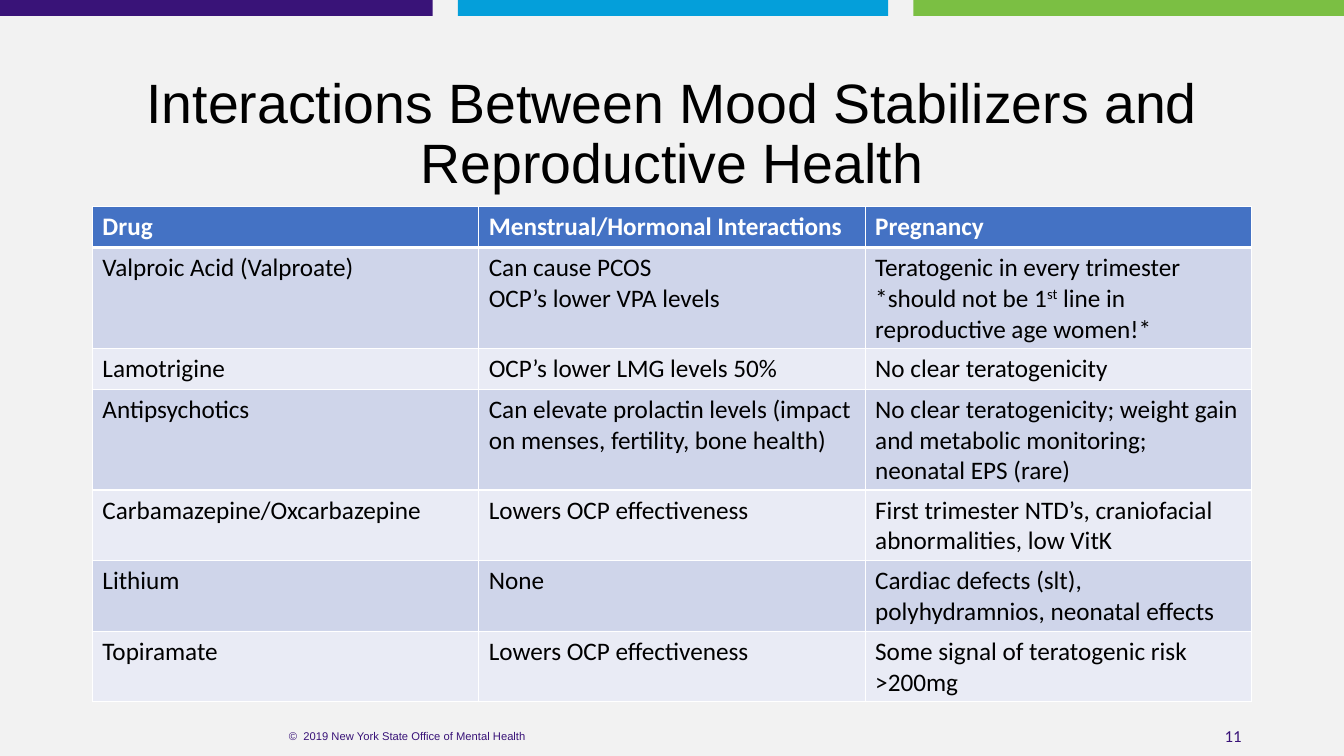
from dataclasses import dataclass
from lxml.etree import SubElement as Sub
from pptx import Presentation
from pptx.dml.color import RGBColor as Rgb
from pptx.enum.shapes import MSO_SHAPE as Kind
from pptx.enum.text import MSO_ANCHOR as Anchor, PP_ALIGN as Align
from pptx.oxml.ns import qn
from pptx.util import Inches, Pt


@dataclass(frozen=True)
class Theme:
    paper: str = "F2F2F2"
    purple: str = "391378"
    blue: str = "049FDA"
    green: str = "7BBF43"
    head: str = "4472C4"
    bands: tuple = ("CFD5EA", "E9EBF5")
    white: str = "FFFFFF"
    black: str = "000000"
    sans: str = "Arial"
    body: str = "Calibri"
    title: float = 39.6
    cell: float = 18
    page: float = 12
    foot: float = 8
    thin: float = 1
    thick: float = 3


COLS, ROWS = 160, 90
UNIT = Inches(1) / 12

BARS = ((0, 51.5, "purple"), (54.5, 51.25, "blue"), (108.75, 51.25, "green"))

DRUGS = (
    ("Drug", "Menstrual/Hormonal Interactions", "Pregnancy"),
    ("Valproic Acid (Valproate)", "Can cause PCOS\nOCP’s lower VPA levels",
     "Teratogenic in every trimester\n"
     "*should not be 1^st^ line in reproductive age women!*"),
    ("Lamotrigine", "OCP’s lower LMG levels 50%", "No clear teratogenicity"),
    ("Antipsychotics",
     "Can elevate prolactin levels (impact on menses, fertility, bone health)",
     "No clear teratogenicity; weight gain and metabolic monitoring; "
     "neonatal EPS (rare)"),
    ("Carbamazepine/Oxcarbazepine", "Lowers OCP effectiveness",
     "First trimester NTD’s, craniofacial abnormalities, low VitK"),
    ("Lithium", "None",
     "Cardiac defects (slt), polyhydramnios, neonatal effects"),
    ("Topiramate", "Lowers OCP effectiveness",
     "Some signal of teratogenic risk >200mg"),
)


class Page:
    def __init__(self, deck, theme):
        self.theme = theme
        self.slide = deck.slides.add_slide(deck.slide_layouts[6])

    def place(self, *spans):
        return [round(span * UNIT) for span in spans]

    def style(self, font, face, size, color, bold=False):
        font.name, font.size, font.bold = face, Pt(size), bold
        font.color.rgb = Rgb.from_string(color)

    def rect(self, x, y, w, h, color):
        box = self.slide.shapes.add_shape(Kind.RECTANGLE, *self.place(x, y, w, h))
        box.shadow.inherit = False
        box.fill.solid()
        box.fill.fore_color.rgb = Rgb.from_string(color)
        box.line.fill.background()

    def text(self, x, y, w, h, words, face, size, color, align, space=1.0):
        box = self.slide.shapes.add_textbox(*self.place(x, y, w, h))
        frame = box.text_frame
        frame.word_wrap = True
        frame.vertical_anchor = Anchor.MIDDLE
        frame.text = words
        para = frame.paragraphs[0]
        para.alignment, para.line_spacing = align, space
        self.style(para.runs[0].font, face, size, color)

    def edges(self, cell, top, base):
        props = cell._tc.get_or_add_tcPr()
        thin = self.theme.thin
        for side, width in zip("LRTB", (thin, thin, top, base)):
            line = Sub(props, qn(f"a:ln{side}"), w=str(Pt(width)))
            fill = Sub(line, qn("a:solidFill"))
            Sub(fill, qn("a:srgbClr"), val=self.theme.white)

    def cell(self, cell, words, row):
        look = self.theme
        head = row == 0
        self.edges(cell, look.thick if row == 1 else look.thin,
                   look.thick if head else look.thin)
        cell.fill.solid()
        fill = look.head if head else look.bands[(row - 1) % 2]
        cell.fill.fore_color.rgb = Rgb.from_string(fill)
        frame = cell.text_frame
        frame.text = words.replace("^", "")
        for para, line in zip(frame.paragraphs, words.split("\n")):
            parts = line.split("^")
            para.text = parts[0]
            for part in parts[1:]:
                para.add_run().text = part
            for num, run in enumerate(para.runs):
                self.style(run.font, look.body, look.cell,
                           look.white if head else look.black, head)
                if num % 2:
                    run._r.get_or_add_rPr().set("baseline", "30000")

    def table(self, x, y, w, high, data):
        frame = self.slide.shapes.add_table(
            len(data), len(data[0]), *self.place(x, y, w, high * len(data)))
        for row, line in enumerate(data):
            for col, words in enumerate(line):
                self.cell(frame.table.cell(row, col), words, row)


def main():
    deck = Presentation()
    deck.slide_width, deck.slide_height = round(COLS * UNIT), round(ROWS * UNIT)
    look = Theme()
    page = Page(deck, look)
    page.rect(0, 0, COLS, ROWS, look.paper)
    for x, w, name in BARS:
        page.rect(x, 0, w, 1.9, getattr(look, name))
    page.text(113, 85.2, 36, 4.8, "11", look.body, look.page,
              look.purple, Align.RIGHT)
    page.text(21.7, 85.2, 53.6, 4.8,
              "©\u00a0 2019 New York State Office of Mental Health".replace("\u00a0", " "),
              look.sans, look.foot, look.purple, Align.CENTER)
    page.text(11, 8.2, 138, 15.8,
              "Interactions Between Mood Stabilizers and Reproductive Health",
              look.sans, look.title, look.black, Align.CENTER, 0.9)
    page.table(11, 24.6, 138, 4.87, DRUGS)
    deck.save("out.pptx")


if __name__ == "__main__":
    main()
